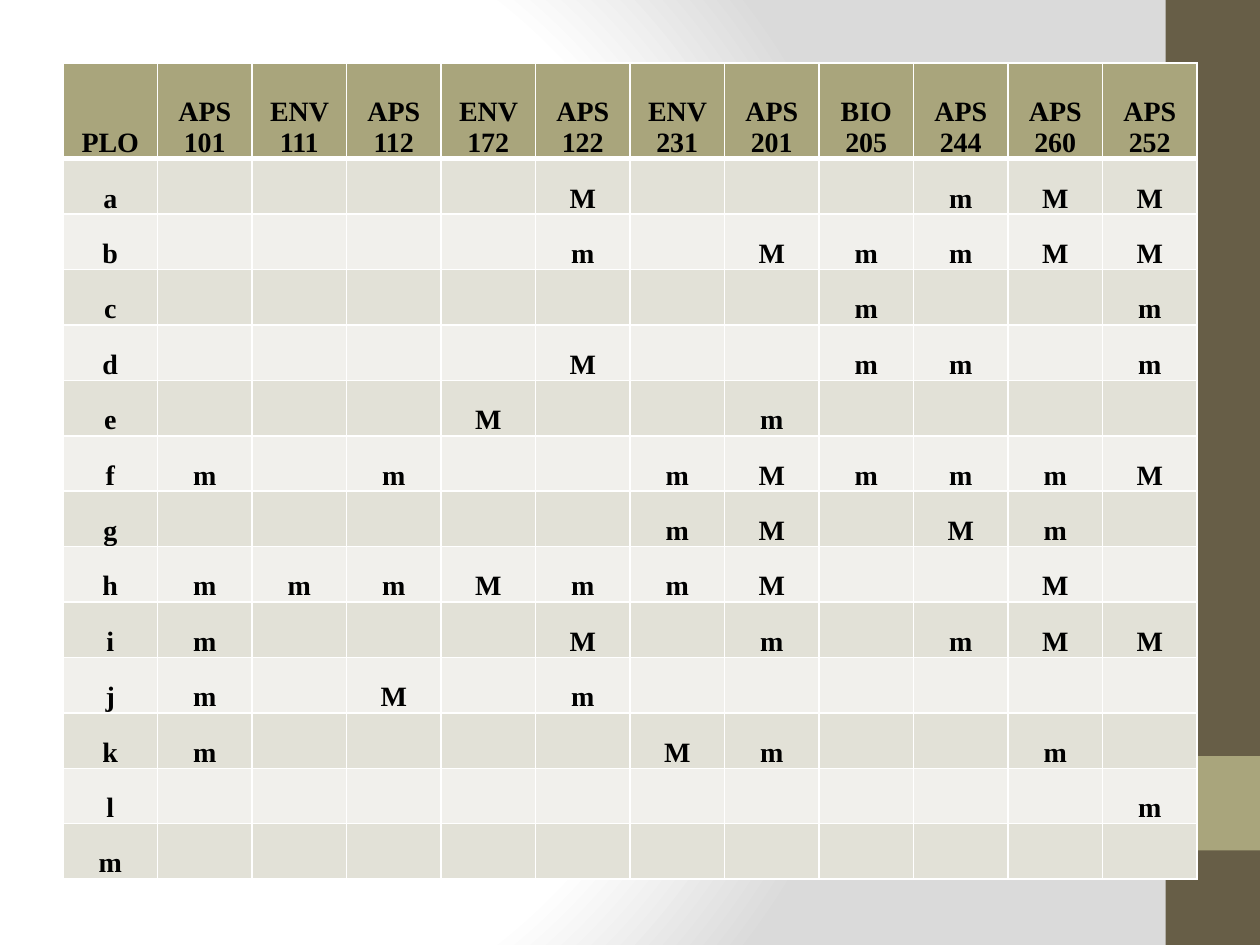
from pptx import Presentation
from pptx.dml.color import RGBColor
from pptx.enum.shapes import MSO_SHAPE
from pptx.enum.text import MSO_ANCHOR, PP_ALIGN
from pptx.oxml import parse_xml
from pptx.oxml.ns import nsdecls
from pptx.util import Inches, Pt

BROWN = RGBColor(0x67, 0x5E, 0x47)
KHAKI = RGBColor(0xA9, 0xA5, 0x7C)
BAND_DARK = RGBColor(0xE2, 0xE1, 0xD7)
BAND_LIGHT = RGBColor(0xF1, 0xF0, 0xEC)
WHITE = RGBColor(0xFF, 0xFF, 0xFF)
BLACK = RGBColor(0x00, 0x00, 0x00)

COURSES = ["APS 101", "ENV 111", "APS 112", "ENV 172", "APS 122", "ENV 231",
           "APS 201", "BIO 205", "APS 244", "APS 260", "APS 252"]
# One mark per course; a dot is an empty cell
MARKS = {
    "a": "....M...mMM",
    "b": "....m.MmmMM",
    "c": ".......m..m",
    "d": "....M..mm.m",
    "e": "...M..m....",
    "f": "m.m..mMmmmM",
    "g": ".....mM.Mm.",
    "h": "mmmMmmM..M.",
    "i": "m...M.m.mMM",
    "j": "m.M.m......",
    "k": "m....Mm..m.",
    "l": "..........m",
    "m": "...........",
}


def set_borders(cell, bottom):
    tcPr = cell._tc.get_or_add_tcPr()
    for side, width in (("L", 1), ("R", 1), ("T", 1), ("B", bottom)):
        tcPr.append(parse_xml(
            f'<a:ln{side} {nsdecls("a")} w="{Pt(width)}"><a:solidFill>'
            f'<a:srgbClr val="{WHITE}"/></a:solidFill></a:ln{side}>'))


prs = Presentation()
prs.slide_width, prs.slide_height = Inches(10), Inches(7.5)
s = prs.slides.add_slide(prs.slide_layouts[6])

# Radial background
stops = "".join(f'<a:gs pos="{pos}"><a:srgbClr val="{color}"/></a:gs>'
                for pos, color in ((0, "FFFFFF"), (75000, "FFFFFF"), (100000, "DADADA")))
s._element.cSld.insert(0, parse_xml(
    f'<p:bg {nsdecls("p", "a")}><p:bgPr><a:gradFill rotWithShape="1">'
    f'<a:gsLst>{stops}</a:gsLst><a:path path="circle">'
    '<a:fillToRect l="20000" t="50000" r="100000" b="50000"/></a:path>'
    '</a:gradFill><a:effectLst/></p:bgPr></p:bg>'))

# Side bar with its accent square
for top, height, color in ((0, 7.5, BROWN), (6, 0.75, KHAKI)):
    sp = s.shapes.add_shape(MSO_SHAPE.RECTANGLE, Inches(9.25), Inches(top),
                            Inches(0.75), Inches(height))
    sp.shadow.inherit = False
    sp.fill.solid()
    sp.fill.fore_color.rgb = color
    sp.line.fill.background()

# Outcome by course table
rows = [["PLO"] + COURSES]
rows += [[outcome] + list(marks.replace(".", " ")) for outcome, marks in MARKS.items()]
table = s.shapes.add_table(len(rows), len(rows[0]), Inches(0.5), Inches(0.5),
                           Inches(9), Inches(6.48)).table
for column in table.columns:
    column.width = Inches(0.75)

for i, row in enumerate(rows):
    table.rows[i].height = Inches(0.44 if i else 0.76)
    color = (BAND_DARK if i % 2 else BAND_LIGHT) if i else KHAKI
    for j, text in enumerate(row):
        cell = table.cell(i, j)
        set_borders(cell, bottom=1 if i else 3)
        cell.fill.solid()
        cell.fill.fore_color.rgb = color
        cell.vertical_anchor = MSO_ANCHOR.BOTTOM
        cell.margin_left = cell.margin_top = cell.margin_right = Inches(0.01)
        cell.margin_bottom = 0
        if text == " ":
            continue
        p = cell.text_frame.paragraphs[0]
        p.alignment = PP_ALIGN.CENTER
        r = p.add_run()
        r.text = text
        r.font.name = "Times New Roman"
        r.font.size = Pt(16)
        r.font.bold = True
        r.font.color.rgb = BLACK

# The thick rule under the header is shared with the first body row
for cell in table.rows[1].cells:
    cell._tc.tcPr.find("{http://schemas.openxmlformats.org/drawingml/2006/main}lnT").set(
        "w", str(Pt(3)))

prs.save("out.pptx")
